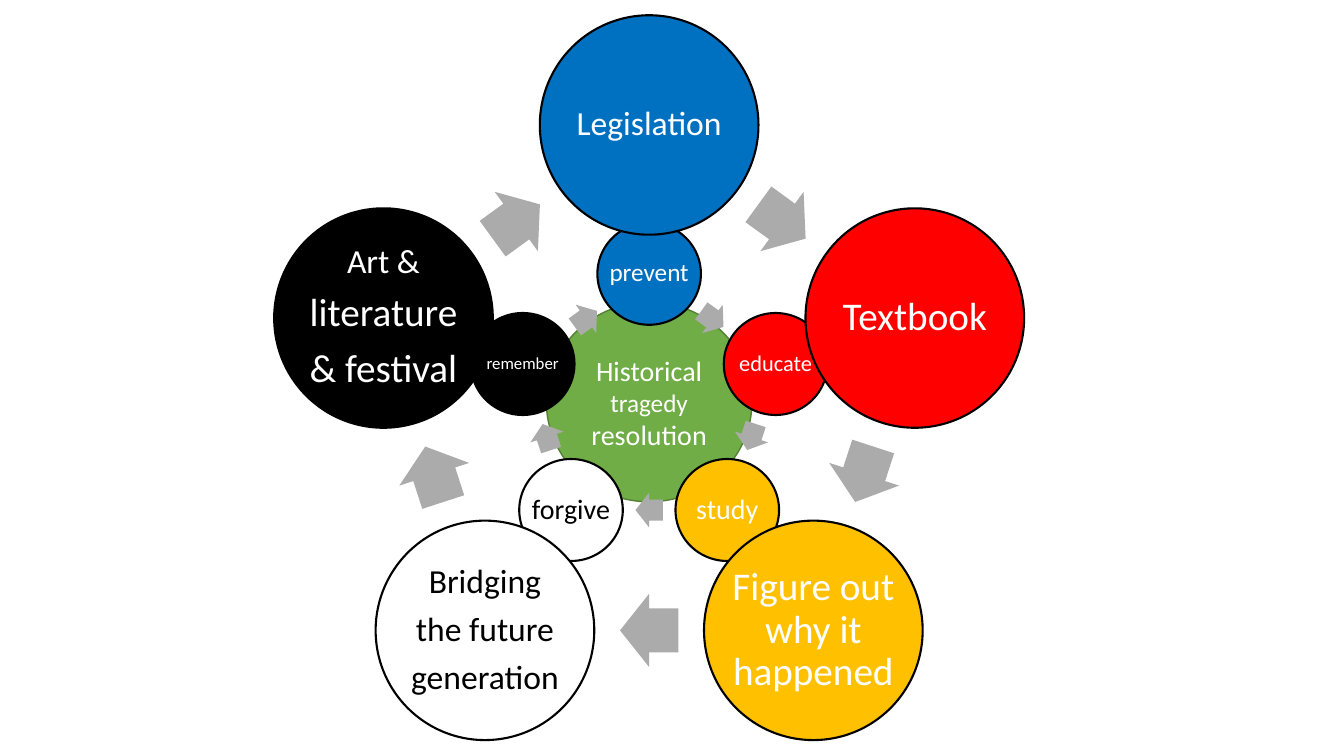
import math

import pptx
import pptx.dml.color
import pptx.enum.shapes
import pptx.enum.text
import pptx.util

Cm, Pt = pptx.util.Cm, pptx.util.Pt
RGBColor = pptx.dml.color.RGBColor
SHAPE = pptx.enum.shapes.MSO_SHAPE

BLUE = RGBColor(0x00, 0x70, 0xC0)
RED = RGBColor(0xFF, 0x00, 0x00)
GOLD = RGBColor(0xFF, 0xC0, 0x00)
WHITE = RGBColor(0xFF, 0xFF, 0xFF)
BLACK = RGBColor(0x00, 0x00, 0x00)
GREEN = RGBColor(0x70, 0xAD, 0x47)
DARK_GREEN = RGBColor(0x53, 0x80, 0x35)
GRAY = RGBColor(0xAB, 0xAB, 0xAB)

# Lines of text are (words, size in points); \v breaks a line within a paragraph.
GOAL = [("Historical", 20), ("tragedy", 18), ("resolution", 20)]

# Clockwise from the top: fill, text colour, lines
AIMS = [
    (BLUE, WHITE, [("prevent", 18)]),
    (RED, WHITE, [("educate", 16)]),
    (GOLD, WHITE, [("study", 20)]),
    (WHITE, BLACK, [("forgive", 20)]),
    (BLACK, WHITE, [("remember", 12)]),
]
MEANS = [
    (BLUE, WHITE, [("Legislation", 24)]),
    (RED, WHITE, [("Textbook", 28)]),
    (GOLD, WHITE, [("Figure out\vwhy it\vhappened", 28)]),
    (WHITE, BLACK, [("Bridging", 24), ("the future", 24), ("generation", 24)]),
    (BLACK, WHITE, [("Art &", 24), ("literature", 28), ("& festival", 28)]),
]

# Lengths in cm: steps, radii of the cycle, circle size, arrow size
RINGS = [
    (AIMS, (3.35, 3.29), (2.61, 2.57), (0.69, 0.88)),
    (MEANS, (7.04, 7.04), (5.51, 5.53), (1.47, 1.85)),
]
CYCLE_CENTER = (16.36, 10.19)
GOAL_CENTER = (16.36, 10.13)
GOAL_SIZE = (5.18, 5.03)

STEP_SPACING = {"line_spacing": 0.9}
SPACE_AFTER_SHARE = 0.35
FRAME_FORMAT = {
    "word_wrap": False,
    "vertical_anchor": pptx.enum.text.MSO_ANCHOR.MIDDLE,
    "margin_left": 0,
    "margin_right": 0,
    "margin_top": 0,
    "margin_bottom": 0,
}


def apply(target, values):
    for attribute, value in values.items():
        setattr(target, attribute, value)


def add_centered(shapes, kind, center, size, fill):
    """Add a shape by its middle point, without shadow or outline."""
    (x, y), (width, height) = center, size
    shape = shapes.add_shape(
        kind, Cm(x - width / 2), Cm(y - height / 2), Cm(width), Cm(height))
    shape.shadow.inherit = False
    shape.fill.solid()
    shape.fill.fore_color.rgb = fill
    shape.line.fill.background()
    return shape


def add_circle(shapes, center, size, fill, outline, weight, lines, color, spaced):
    circle = add_centered(shapes, SHAPE.OVAL, center, size, fill)
    circle.line.color.rgb = outline
    circle.line.width = Pt(weight)
    frame = circle.text_frame
    apply(frame, FRAME_FORMAT)
    for index, (words, points) in enumerate(lines):
        paragraph = frame.add_paragraph() if index else frame.paragraphs[0]
        paragraph.text = words
        paragraph.alignment = pptx.enum.text.PP_ALIGN.CENTER
        if spaced:
            apply(paragraph, STEP_SPACING)
            paragraph.space_after = Pt(round(points * SPACE_AFTER_SHARE, 1))
        for run in paragraph.runs:
            apply(run.font, {"name": "Calibri", "size": Pt(points)})
            run.font.color.rgb = color


def add_ring(shapes, steps, radii, circle_size, arrow_size):
    """Place the steps clockwise from the top, with an arrow midway to each next one."""
    turn = 360 / len(steps)
    centers = []
    for index in range(len(steps)):
        angle = math.radians(index * turn)
        centers.append((CYCLE_CENTER[0] + radii[0] * math.sin(angle),
                        CYCLE_CENTER[1] - radii[1] * math.cos(angle)))
    for index, (fill, color, lines) in enumerate(steps):
        here, following = centers[index], centers[(index + 1) % len(steps)]
        add_circle(shapes, here, circle_size, fill, BLACK, 1.5, lines, color, True)
        middle = [(a + b) / 2 for a, b in zip(here, following)]
        arrow = add_centered(shapes, SHAPE.RIGHT_ARROW, middle, arrow_size, GRAY)
        arrow.adjustments[0] = 0.6
        arrow.adjustments[1] = 0.5
        arrow.rotation = (index + 0.5) * turn


def main():
    deck = pptx.Presentation()
    deck.slide_width, deck.slide_height = Cm(33.87), Cm(19.05)
    slide = deck.slides.add_slide(deck.slide_layouts[6])
    add_circle(slide.shapes, GOAL_CENTER, GOAL_SIZE, GREEN, DARK_GREEN, 1,
               GOAL, WHITE, False)
    for ring in RINGS:
        add_ring(slide.shapes.add_group_shape().shapes, *ring)
    deck.save("out.pptx")


if __name__ == "__main__":
    main()
